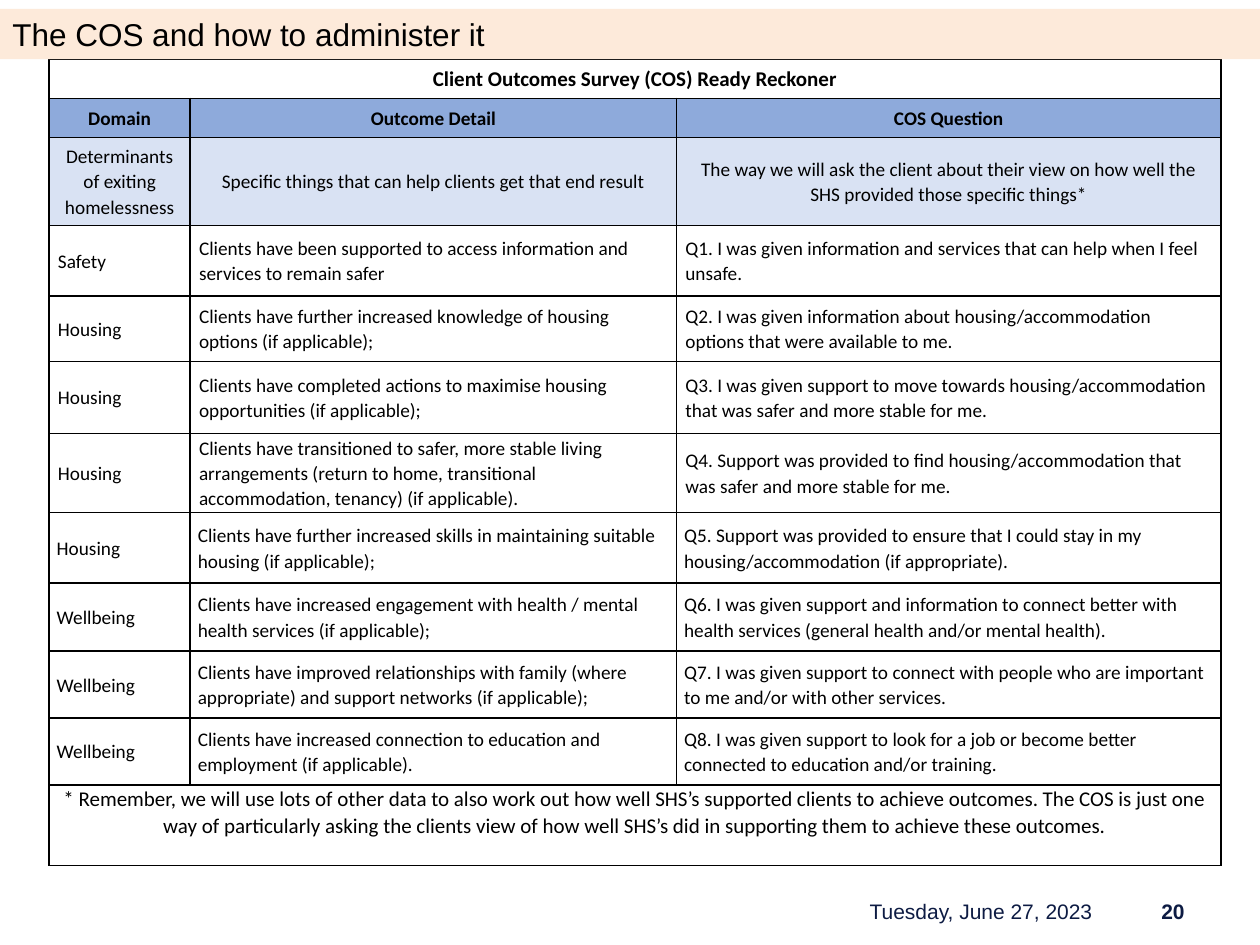
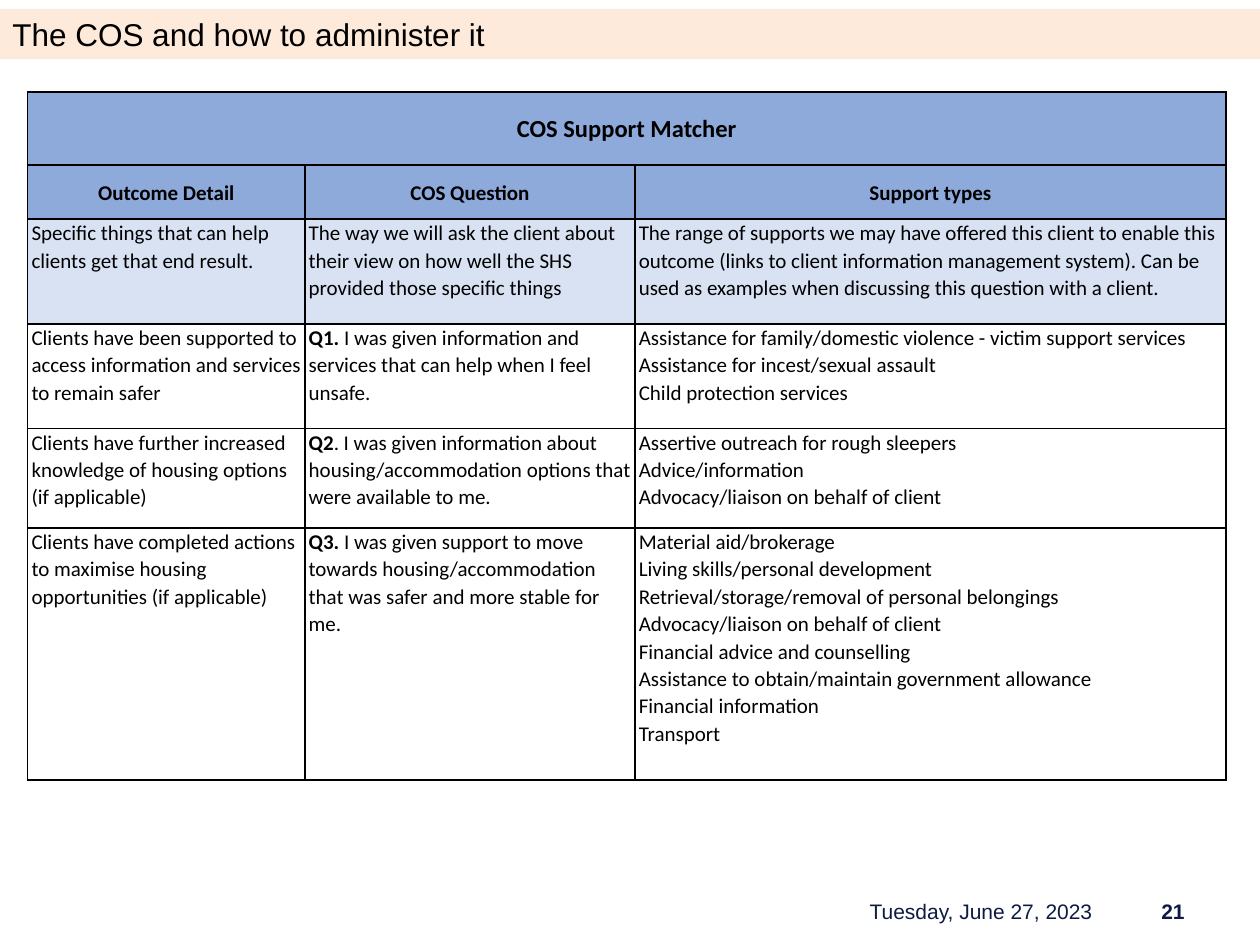
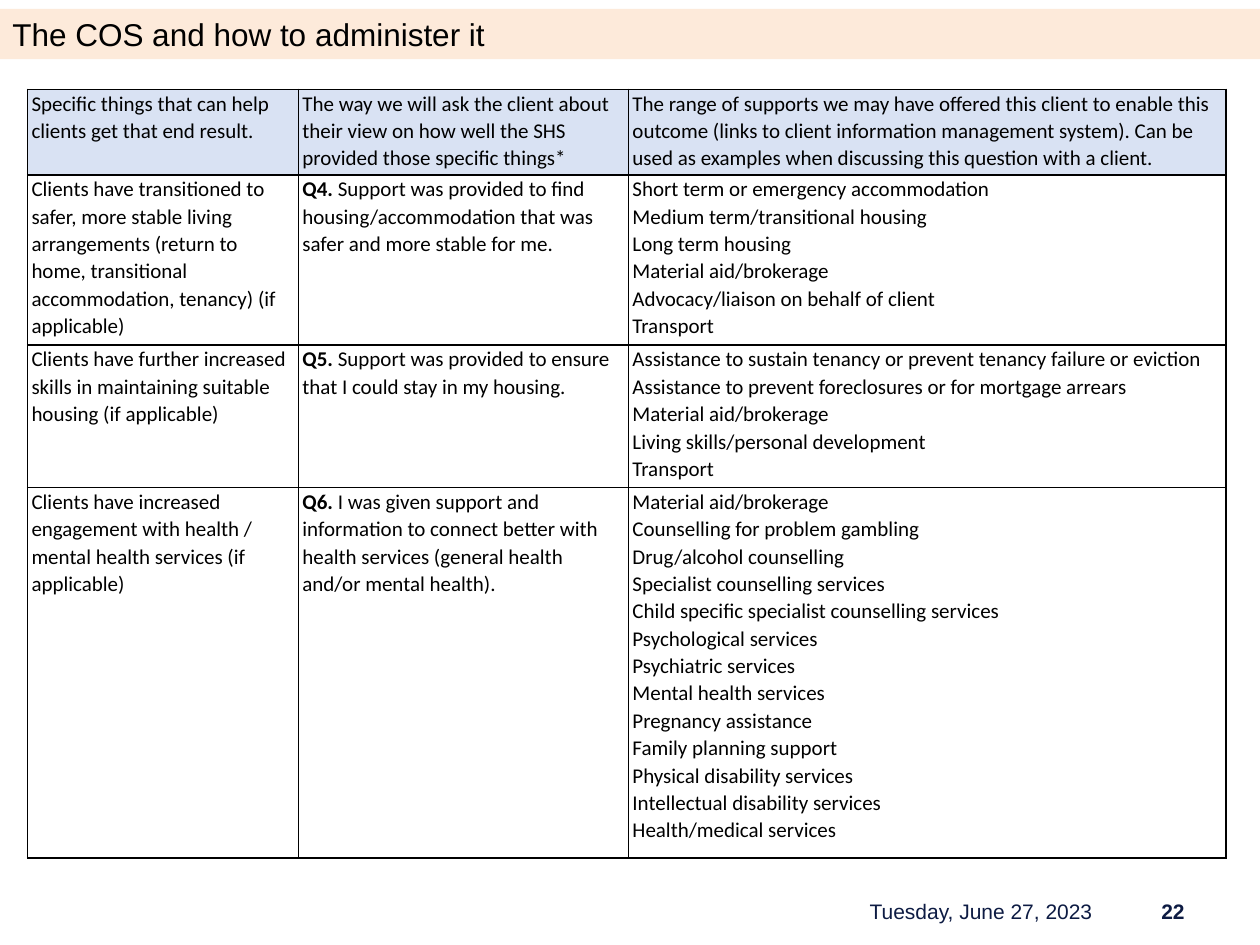
import dataclasses

import lxml.etree
import pptx
import pptx.dml.color
import pptx.enum.shapes
import pptx.enum.text
import pptx.oxml.ns
import pptx.util

Inches = pptx.util.Inches
Pt = pptx.util.Pt
Align = pptx.enum.text.PP_ALIGN
Anchor = pptx.enum.text.MSO_ANCHOR


@dataclasses.dataclass(frozen=True)
class Theme:
    black: str = "000000"
    white: str = "FFFFFF"
    navy: str = "0D1B43"
    peach: str = "FDEADA"
    blue: str = "8EAADB"
    pale_blue: str = "D9E2F3"
    heading_font: str = "Arial"
    table_font: str = "Calibri"
    title_size: int = 18
    large_size: int = 14
    body_size: int = 12
    small_size: int = 11
    line_spacing: float = 1.07
    border_width: int = 1


THEME = Theme()


@dataclasses.dataclass(frozen=True)
class CellStyle:
    fill: str = None
    size: int = THEME.body_size
    bold: bool = False
    align: int = Align.LEFT
    anchor: int = Anchor.MIDDLE
    inset: float = 0.06
    space_after: int = 0


# Row styles of the reckoner table
RECKONER_TITLE = CellStyle(THEME.white, bold=True, align=Align.CENTER)
RECKONER_HEADING = CellStyle(THEME.blue, THEME.small_size, True, Align.CENTER)
RECKONER_INTRO = CellStyle(THEME.pale_blue, THEME.small_size, align=Align.CENTER)
RECKONER_WIDE = CellStyle(size=THEME.small_size, inset=0.07)
RECKONER_BODY = CellStyle(size=THEME.small_size)
RECKONER_NOTE = CellStyle(align=Align.CENTER, anchor=Anchor.TOP)

# Row styles of the support matcher tables
MATCHER_BODY = CellStyle(anchor=Anchor.TOP, inset=0.03, space_after=8)
MATCHER_INTRO = dataclasses.replace(MATCHER_BODY, fill=THEME.pale_blue)
MATCHER_HEADING = CellStyle(THEME.blue, bold=True, align=Align.CENTER, inset=0.03)
MATCHER_TITLE = dataclasses.replace(MATCHER_HEADING, size=THEME.large_size)

PAGE_TITLE = "The COS and how to administer it"
PAGE_DATE = "Tuesday, June 27, 2023"

# Each row is height, style, cells; a single cell spans the whole row
RECKONER_ROWS = [
    (0.31, RECKONER_TITLE, ["Client Outcomes Survey (COS) Ready Reckoner"]),
    (0.31, RECKONER_HEADING, ["Domain", "Outcome Detail", "COS Question"]),
    (0.7, RECKONER_INTRO, [
        "Determinants of exiting homelessness",
        "Specific things that can help clients get that end result",
        "The way we will ask the client about their view on how well the SHS provided those specific things*"]),
    (0.56, RECKONER_WIDE, [
        "Safety",
        "Clients have been supported to access information and services to remain safer",
        "Q1. I was given information and services that can help when I feel unsafe."]),
    (0.52, RECKONER_WIDE, [
        "Housing",
        "Clients have further increased knowledge of housing options (if applicable);",
        "Q2. I was given information about housing/accommodation options that were available to me."]),
    (0.57, RECKONER_WIDE, [
        "Housing",
        "Clients have completed actions to maximise housing opportunities (if applicable);",
        "Q3. I was given support to move towards housing/accommodation that was safer and more stable for me."]),
    (0.63, RECKONER_WIDE, [
        "Housing",
        "Clients have transitioned to safer, more stable living arrangements (return to home, "
        "transitional accommodation, tenancy) (if applicable).",
        "Q4. Support was provided to find housing/accommodation that was safer and more stable for me."]),
    (0.56, RECKONER_BODY, [
        "Housing",
        "Clients have further increased skills in maintaining suitable housing (if applicable);",
        "Q5. Support was provided to ensure that I could stay in my housing/accommodation (if appropriate)."]),
    (0.54, RECKONER_BODY, [
        "Wellbeing",
        "Clients have increased engagement with health / mental health services (if applicable);",
        "Q6. I was given support and information to connect better with health services "
        "(general health and/or mental health)."]),
    (0.53, RECKONER_BODY, [
        "Wellbeing",
        "Clients have improved relationships with family (where appropriate) and support networks (if applicable);",
        "Q7. I was given support to connect with people who are important to me and/or with other services."]),
    (0.53, RECKONER_BODY, [
        "Wellbeing",
        "Clients have increased connection to education and employment (if applicable).",
        "Q8. I was given support to look for a job or become better connected to education and/or training."]),
    (0.64, RECKONER_NOTE, [
        "* Remember, we will use lots of other data to also work out how well SHS’s supported clients to "
        "achieve outcomes. The COS is just one way of particularly asking the clients view of how well "
        "SHS’s did in supporting them to achieve these outcomes."]),
]

OUTCOME_INTRO = "Specific things that can help clients get that end result."
QUESTION_INTRO = "The way we will ask the client about their view on how well the SHS provided those specific things"
SUPPORT_INTRO = (
    "The range of supports we may have offered this client to enable this outcome (links to client information "
    "management system). Can be used as examples when discussing this question with a client.")

# In matcher cells a tuple is a bold lead and its text, a list is one line per support
MATCHER_START_ROWS = [
    (0.58, MATCHER_TITLE, ["COS Support Matcher"]),
    (0.43, MATCHER_HEADING, ["Outcome Detail", "COS Question", "Support types"]),
    (0.83, MATCHER_INTRO, [OUTCOME_INTRO, QUESTION_INTRO, SUPPORT_INTRO]),
    (0.83, MATCHER_BODY, [
        "Clients have been supported to access information and services to remain safer",
        ("Q1. ", "I was given information and services that can help when I feel unsafe."),
        ["Assistance for family/domestic violence - victim support services",
         "Assistance for incest/sexual assault",
         "Child protection services"]]),
    (0.79, MATCHER_BODY, [
        "Clients have further increased knowledge of housing options (if applicable)",
        ("Q2", ". I was given information about housing/accommodation options that were available to me."),
        ["Assertive outreach for rough sleepers",
         "Advice/information",
         "Advocacy/liaison on behalf of client"]]),
    (2, MATCHER_BODY, [
        "Clients have completed actions to maximise housing opportunities (if applicable)",
        ("Q3. ", "I was given support to move towards housing/accommodation that was safer and more stable for me."),
        ["Material aid/brokerage",
         "Living skills/personal development",
         "Retrieval/storage/removal of personal belongings",
         "Advocacy/liaison on behalf of client",
         "Financial advice and counselling",
         "Assistance to obtain/maintain government allowance",
         "Financial information",
         "Transport"]]),
]

MATCHER_CONTINUED_ROWS = [
    (0.68, MATCHER_INTRO, [OUTCOME_INTRO, QUESTION_INTRO + "*", SUPPORT_INTRO]),
    (1.35, MATCHER_BODY, [
        "Clients have transitioned to safer, more stable living arrangements (return to home, "
        "transitional accommodation, tenancy) (if applicable)",
        ("Q4. ", "Support was provided to find housing/accommodation that was safer and more stable for me."),
        ["Short term or emergency accommodation",
         "Medium term/transitional housing",
         "Long term housing",
         "Material aid/brokerage",
         "Advocacy/liaison on behalf of client",
         "Transport"]]),
    (1.13, MATCHER_BODY, [
        "Clients have further increased skills in maintaining suitable housing (if applicable)",
        ("Q5. ", "Support was provided to ensure that I could stay in my housing."),
        ["Assistance to sustain tenancy or prevent tenancy failure or eviction",
         "Assistance to prevent foreclosures or for mortgage arrears",
         "Material aid/brokerage",
         "Living skills/personal development",
         "Transport"]]),
    (2.94, MATCHER_BODY, [
        "Clients have increased engagement with health / mental health services (if applicable)",
        ("Q6. ", "I was given support and information to connect better with health services "
                 "(general health and/or mental health)."),
        ["Material aid/brokerage",
         "Counselling for problem gambling",
         "Drug/alcohol counselling",
         "Specialist counselling services",
         "Child specific specialist counselling services",
         "Psychological services",
         "Psychiatric services",
         "Mental health services",
         "Pregnancy assistance",
         "Family planning support",
         "Physical disability services",
         "Intellectual disability services",
         "Health/medical services"]]),
]

# Page number, table position, column widths and rows of each slide
PAGES = [
    (20, (0.39, 0.47), (1.12, 3.86, 4.32), RECKONER_ROWS),
    (21, (0.22, 0.73), (2.2, 2.62, 4.69), MATCHER_START_ROWS),
    (22, (0.22, 0.71), (2.15, 2.62, 4.74), MATCHER_CONTINUED_ROWS),
]


def rgb(value):
    return pptx.dml.color.RGBColor.from_string(value)


def set_attributes(target, values):
    for name, value in values.items():
        setattr(target, name, value)


def add_run(paragraph, text, font, size, color, bold=False):
    run = paragraph.add_run()
    run.text = text
    set_attributes(run.font, {"name": font, "size": Pt(size), "bold": bold})
    run.font.color.rgb = rgb(color)


def set_borders(cell):
    properties = cell._tc.get_or_add_tcPr()
    for position, side in enumerate(("lnL", "lnR", "lnT", "lnB")):
        line = lxml.etree.Element(pptx.oxml.ns.qn("a:" + side), w=str(Pt(THEME.border_width)))
        fill = lxml.etree.SubElement(line, pptx.oxml.ns.qn("a:solidFill"))
        lxml.etree.SubElement(fill, pptx.oxml.ns.qn("a:srgbClr"), val=THEME.black)
        properties.insert(position, line)


def format_cell(cell, style):
    set_attributes(cell, {
        "margin_left": Inches(style.inset), "margin_right": Inches(style.inset),
        "margin_top": 0, "margin_bottom": 0, "vertical_anchor": style.anchor})
    if style.fill:
        cell.fill.solid()
        cell.fill.fore_color.rgb = rgb(style.fill)
    else:
        cell.fill.background()
    set_borders(cell)


def write_cell(cell, content, style):
    is_list = isinstance(content, list)
    frame = cell.text_frame
    for index, line in enumerate(content if is_list else [content]):
        paragraph = frame.add_paragraph() if index else frame.paragraphs[0]
        set_attributes(paragraph, {
            "alignment": style.align, "line_spacing": THEME.line_spacing,
            "space_after": Pt(0 if is_list else style.space_after)})
        lead, text = line if isinstance(line, tuple) else ("", line)
        if lead:
            add_run(paragraph, lead, THEME.table_font, style.size, THEME.black, True)
        add_run(paragraph, text, THEME.table_font, style.size, THEME.black, style.bold)


def add_outcome_table(slide, position, widths, rows):
    left, top = position
    height = sum(row[0] for row in rows)
    table = slide.shapes.add_table(
        len(rows), len(widths), Inches(left), Inches(top), Inches(sum(widths)), Inches(height)).table
    set_attributes(table, {"first_row": False, "horz_banding": False})
    for column, width in zip(table.columns, widths):
        column.width = Inches(width)
    for row_index, (row_height, style, contents) in enumerate(rows):
        row = table.rows[row_index]
        row.height = Inches(row_height)
        for cell in row.cells:
            format_cell(cell, style)
        if len(contents) == 1:
            row.cells[0].merge(row.cells[len(widths) - 1])
        for cell, content in zip(row.cells, contents):
            write_cell(cell, content, style)


def add_footer(slide, number, top=7.12, height=0.23):
    for left, width, text, bold in ((8.68, 0.82, str(number), True), (6.44, 2.33, PAGE_DATE, False)):
        box = slide.shapes.add_textbox(Inches(left), Inches(top), Inches(width), Inches(height))
        set_attributes(box.text_frame, {"word_wrap": True, "vertical_anchor": Anchor.MIDDLE})
        paragraph = box.text_frame.paragraphs[0]
        paragraph.alignment = Align.RIGHT
        add_run(paragraph, text, THEME.heading_font, THEME.body_size, THEME.navy, bold)


def add_title_band(slide, left=0, top=0.07, width=10, height=0.4):
    band = slide.shapes.add_shape(
        pptx.enum.shapes.MSO_SHAPE.RECTANGLE, Inches(left), Inches(top), Inches(width), Inches(height))
    band.shadow.inherit = False
    band.fill.solid()
    band.fill.fore_color.rgb = rgb(THEME.peach)
    band.line.fill.background()
    set_attributes(band.text_frame, {
        "word_wrap": True, "vertical_anchor": Anchor.TOP,
        "auto_size": pptx.enum.text.MSO_AUTO_SIZE.SHAPE_TO_FIT_TEXT})
    paragraph = band.text_frame.paragraphs[0]
    paragraph.alignment = Align.LEFT
    add_run(paragraph, PAGE_TITLE, THEME.heading_font, THEME.title_size, THEME.black)


def add_table_slide(presentation, number, position, widths, rows):
    slide = presentation.slides.add_slide(presentation.slide_layouts[6])
    add_footer(slide, number)
    add_outcome_table(slide, position, widths, rows)
    add_title_band(slide)


def main():
    presentation = pptx.Presentation()
    set_attributes(presentation, {"slide_width": Inches(10), "slide_height": Inches(7.5)})
    for page in PAGES:
        add_table_slide(presentation, *page)
    presentation.save("out.pptx")


if __name__ == "__main__":
    main()
